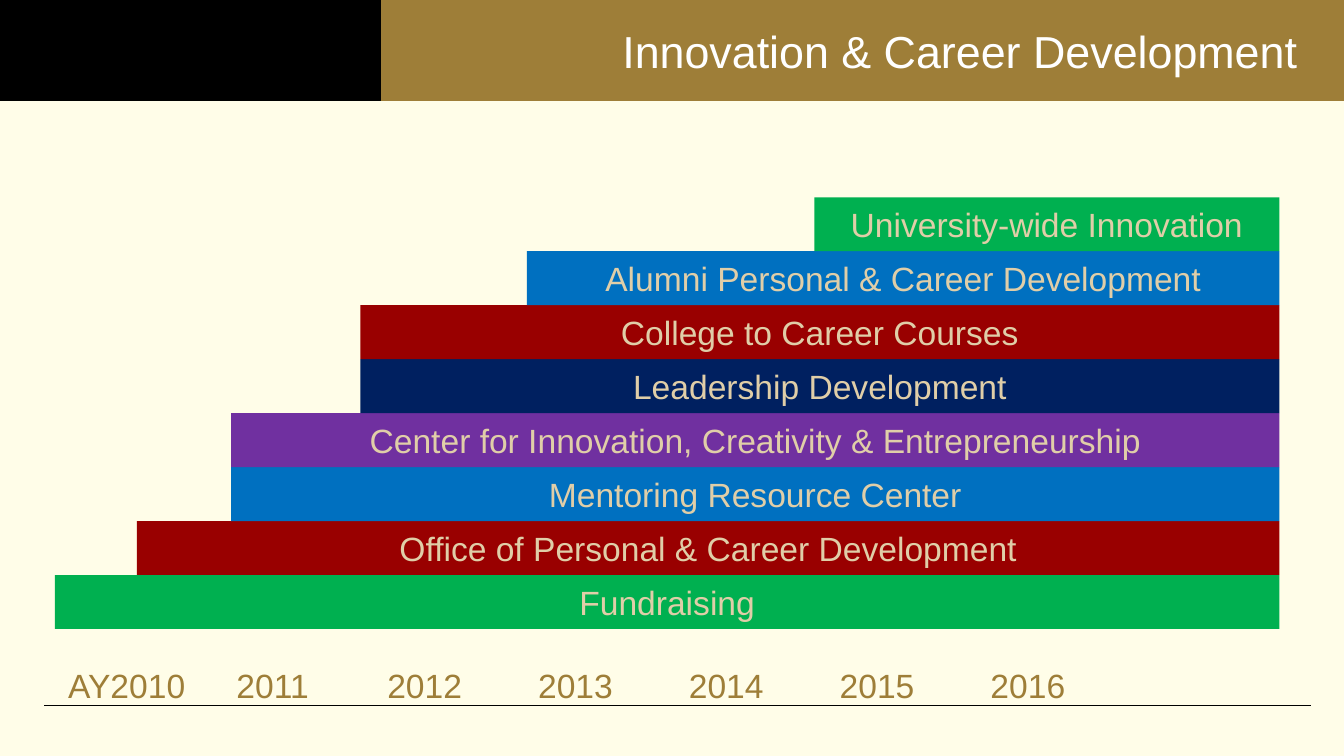
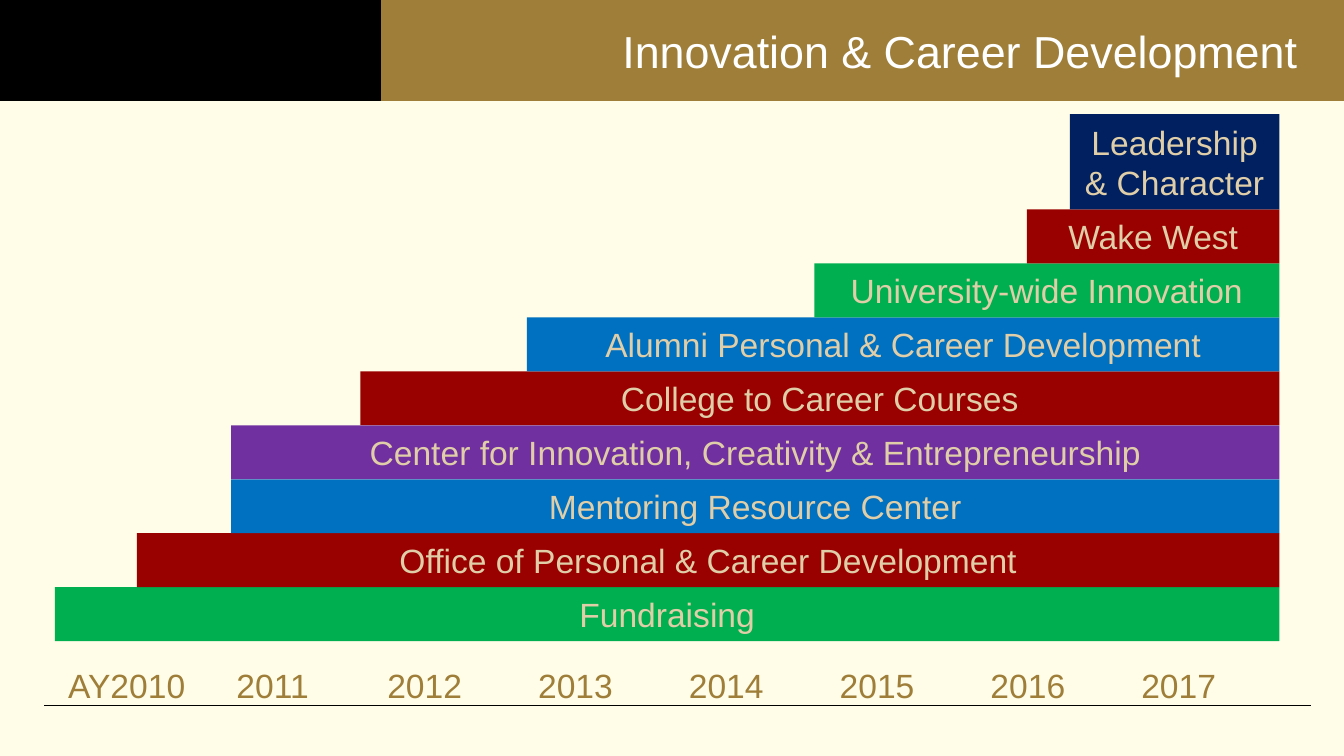
from dataclasses import dataclass

from lxml.etree import SubElement
from pptx import Presentation
from pptx.dml.color import RGBColor
from pptx.enum.shapes import MSO_CONNECTOR, MSO_SHAPE
from pptx.enum.text import MSO_ANCHOR, MSO_AUTO_SIZE, PP_ALIGN
from pptx.oxml.ns import qn
from pptx.util import Cm, Pt


@dataclass(frozen=True)
class Theme:
    font: str = "Arial"
    title_size: int = 24
    body_size: int = 18
    line_width: float = 0.75
    cream: str = "FFFDE8"
    gold: str = "9E7E38"
    sand: str = "E0CEA8"
    white: str = "FFFFFF"
    black: str = "000000"
    green: str = "00B050"
    red: str = "990000"
    blue: str = "0070C0"
    purple: str = "7030A0"
    navy: str = "002060"


theme = Theme()


def write(shape, text, size=theme.body_size, color=theme.sand,
          align=PP_ALIGN.CENTER, anchor=MSO_ANCHOR.MIDDLE,
          autosize=MSO_AUTO_SIZE.NONE, tabs=()):
    """Fill a shape with one formatted paragraph; tabs are in centimetres."""
    frame = shape.text_frame
    frame.word_wrap = True
    frame.auto_size = autosize
    frame.vertical_anchor = anchor
    para = frame.paragraphs[0]
    para.alignment = align
    if tabs:
        tab_list = SubElement(para._p.get_or_add_pPr(), qn("a:tabLst"))
        for position in tabs:
            SubElement(tab_list, qn("a:tab"), pos=str(Cm(position)), algn="l")
    span = para.add_run()
    span.text = text
    span.font.name = theme.font
    span.font.size = Pt(size)
    span.font.color.rgb = RGBColor.from_string(color)


def add_block(slide, left, top, width, height, color):
    """Add a plain rectangle, measured in centimetres."""
    block = slide.shapes.add_shape(
        MSO_SHAPE.RECTANGLE, Cm(left), Cm(top), Cm(width), Cm(height))
    block.shadow.inherit = False
    block.fill.solid()
    block.fill.fore_color.rgb = RGBColor.from_string(color)
    block.line.fill.background()
    return block


SLIDE_WIDTH = 25.4
BAND_HEIGHT = 1.9
BAR_LEFT, BAR_RIGHT, BAR_HEIGHT = 1.04, 24.18, 1.02
YEAR_TABS = [3.18 + 2.85 * step for step in range(7)]

# Each bar: label, left edge, colour, height
fundraising = ("Fundraising", BAR_LEFT, theme.green, BAR_HEIGHT)
career_office = ("Office of Personal & Career Development", 2.59, theme.red, BAR_HEIGHT)
mentoring = ("Mentoring Resource Center", 4.37, theme.blue, BAR_HEIGHT)
innovation_center = ("Center for Innovation, Creativity & Entrepreneurship", 4.37,
                     theme.purple, BAR_HEIGHT)
leadership = ("Leadership Development", 6.81, theme.navy, BAR_HEIGHT)
courses = ("College to Career Courses", 6.81, theme.red, BAR_HEIGHT)
alumni = ("Alumni Personal & Career Development", 9.96, theme.blue, BAR_HEIGHT)
university = ("University-wide Innovation", 15.39, theme.green, BAR_HEIGHT)
wake_west = ("Wake West", 19.41, theme.red, BAR_HEIGHT)
character = ("Leadership & Character", 20.22, theme.navy, 1.8)

# Each slide: bottom of the staircase, last year, bars from the bottom up
staircases = [
    (11.89, 2016, [fundraising, career_office, mentoring, innovation_center,
                   leadership, courses, alumni, university]),
    (12.12, 2017, [fundraising, career_office, mentoring, innovation_center,
                   courses, alumni, university, wake_west, character]),
]

deck = Presentation()
deck.slide_width = Cm(SLIDE_WIDTH)
deck.slide_height = Cm(14.29)

# Shared look: background on the master, bands and rule on the layout
background = deck.slide_master.background.fill
background.solid()
background.fore_color.rgb = RGBColor.from_string(theme.cream)

layout = deck.slide_layouts[5]
for placeholder in list(layout.placeholders):
    if placeholder.placeholder_format.idx != 0:
        layout.shapes.element.remove(placeholder.element)

slides = [deck.slides.add_slide(layout) for _ in staircases]

gold_band = add_block(slides[0], 0, 0, SLIDE_WIDTH, BAND_HEIGHT, theme.gold)
black_band = add_block(slides[0], 0, 0, 7.19, BAND_HEIGHT, theme.black)
rule = slides[0].shapes.add_connector(
    MSO_CONNECTOR.STRAIGHT, Cm(0.84), Cm(13.34), Cm(24.77), Cm(13.34))
frame_parts = [(gold_band, theme.gold), (black_band, theme.black), (rule, theme.black)]
for position, (part, color) in enumerate(frame_parts, start=2):
    part.line.color.rgb = RGBColor.from_string(color)
    part.line.width = Pt(theme.line_width)
    layout.shapes.element.insert(position, part.element)
SubElement(rule.element.spPr, qn("a:effectLst"))

for slide, (bottom, last_year, bars) in zip(slides, staircases):
    title = slide.shapes.title
    title.left, title.top = Cm(7.62), Cm(0)
    title.width, title.height = Cm(17.15), Cm(BAND_HEIGHT)
    write(title, "Innovation & Career Development", size=theme.title_size,
          color=theme.white, align=PP_ALIGN.RIGHT)

    top = bottom
    for label, left, color, height in bars:
        top -= height
        bar = add_block(slide, left, top, BAR_RIGHT - left, height, color)
        write(bar, label)

    years = ["AY2010", *map(str, range(2011, last_year + 1))]
    timeline = slide.shapes.add_textbox(
        Cm(BAR_LEFT), Cm(12.45), Cm(BAR_RIGHT - BAR_LEFT), Cm(BAR_HEIGHT))
    write(timeline, "\t".join(years), color=theme.gold, align=PP_ALIGN.LEFT,
          anchor=MSO_ANCHOR.TOP, autosize=MSO_AUTO_SIZE.SHAPE_TO_FIT_TEXT,
          tabs=YEAR_TABS)

deck.save("out.pptx")
